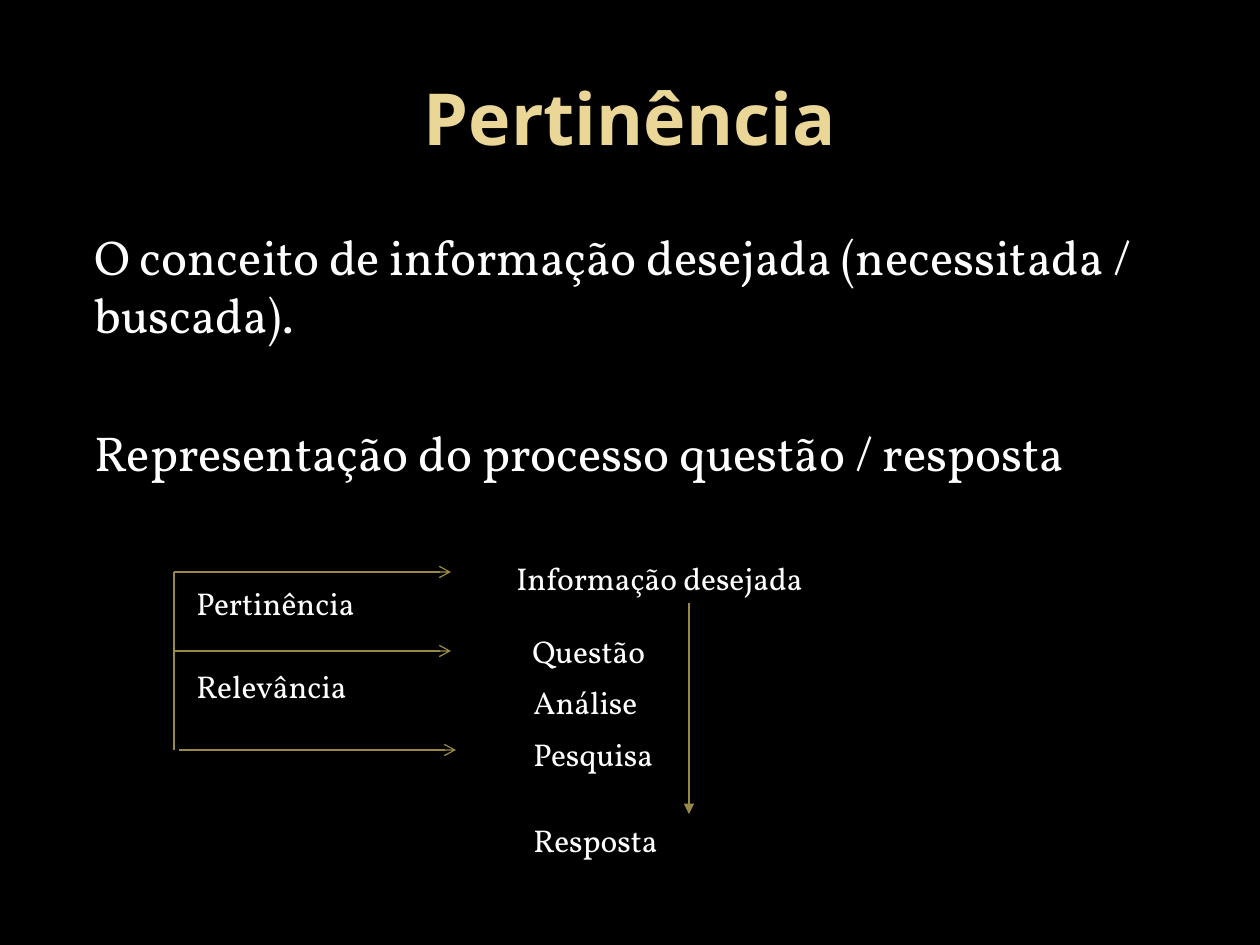
from dataclasses import dataclass

from lxml.etree import SubElement
from pptx import Presentation
from pptx.dml.color import RGBColor as RGB
from pptx.enum.shapes import MSO_CONNECTOR as Conn
from pptx.enum.text import MSO_ANCHOR as Anchor, MSO_AUTO_SIZE as Fit, PP_ALIGN as Align
from pptx.oxml.ns import qn
from pptx.util import Pt

PX = 914400 / 126


@dataclass(frozen=True)
class Theme:
    back: RGB = RGB(0, 0, 0)
    head: RGB = RGB(0xEA, 0xD6, 0x96)
    text: RGB = RGB(255, 255, 255)
    line: RGB = RGB(0x99, 0x89, 0x46)
    head_font: str = "Noto Sans"
    font: str = "Vollkorn"
    head_size: int = 41
    body_size: int = 28
    label_size: int = 18


look = Theme()
deck = Presentation()
deck.slide_width, deck.slide_height = int(1260 * PX), int(945 * PX)
slide = deck.slides.add_slide(deck.slide_layouts[6])
slide.background.fill.solid()
slide.background.fill.fore_color.rgb = look.back


def write(box, lines, size, font=look.font, color=look.text, bold=False):
    """Add a text box at box (left, top, width, height in px), one paragraph a line."""
    frame = slide.shapes.add_textbox(*(int(n * PX) for n in box)).text_frame
    frame.word_wrap = True
    frame.text = "\n".join(lines)
    for para in frame.paragraphs:
        for run in para.runs:
            run.font.name, run.font.size = font, Pt(size)
            run.font.color.rgb, run.font.bold = color, bold
    return frame


def rule(x1, y1, x2, y2, tip=None):
    """Draw a line in px, with an arrowhead of type tip at its end."""
    line = slide.shapes.add_connector(Conn.STRAIGHT, *(int(n * PX) for n in (x1, y1, x2, y2)))
    line.line.color.rgb, line.line.width = look.line, Pt(0.75)
    if tip:
        SubElement(line.line._get_or_add_ln(), qn("a:tailEnd"), type=tip)
    SubElement(line._element.spPr, qn("a:effectLst"))


# Title and body
title = write((63, 38, 1134, 157), ["Pertinência"], look.head_size,
              look.head_font, look.head, True)
title.vertical_anchor = Anchor.MIDDLE
title.paragraphs[0].alignment = Align.CENTER

body = write((63, 220, 1134, 490), [
    "O conceito de informação desejada (necessitada / buscada).",
    "Representação do processo questão / resposta",
], look.body_size)
for para in body.paragraphs:
    para._p.get_or_add_pPr().set("marL", str(int(19 * PX)))
body.paragraphs[1].space_before = Pt(45)

# Bracket with three arrows
left, reach = 174, 277
top, mid, base = 572, 651, 750
for x, y in ((left, top), (left, mid), (left + 5, base)):
    rule(x, y, x + reach, y, "arrow")
rule(left, top, left, base)

# Labels: left, top, width, text
labels = [
    (504, 553, 318, "Informação desejada"),
    (520, 626, 142, "Questão"),
    (521, 677, 132, "Análise"),
    (521, 729, 149, "Pesquisa"),
    (521, 815, 151, "Resposta"),
    (184, 578, 184, "Pertinência"),
    (184, 661, 178, "Relevância"),
]
for x, y, wide, text in labels:
    frame = write((x, y, wide, 51), [text], look.label_size)
    frame.word_wrap = False
    frame.auto_size = Fit.SHAPE_TO_FIT_TEXT

# From the wanted information down to the answer
rule(689, 603, 689, 814, "triangle")

deck.save("out.pptx")
